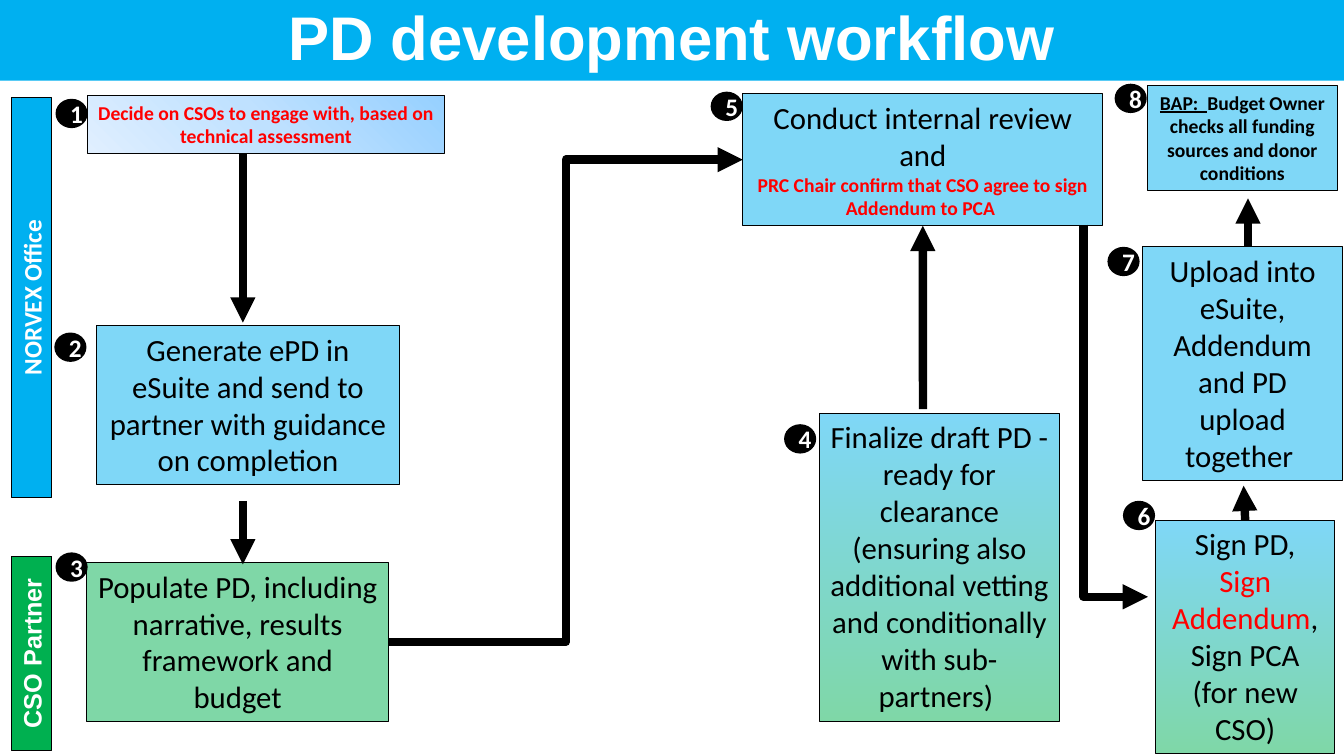
from lxml import etree
from pptx import Presentation
from pptx import util as u
from pptx.dml.color import RGBColor
from pptx.enum import shapes, text
from pptx.oxml import ns

BLACK = RGBColor(0x00, 0x00, 0x00)
WHITE = RGBColor(0xFF, 0xFF, 0xFF)
RED = RGBColor(0xFF, 0x00, 0x00)
BLUE = RGBColor(0x00, 0xB0, 0xF0)
GREEN = RGBColor(0x00, 0xB0, 0x50)
SKY = RGBColor(0x96, 0xD0, 0xFF)
PALE_SKY = RGBColor(0xBF, 0xE1, 0xFF)
ICE = RGBColor(0xE0, 0xEF, 0xFF)

STEP = {"size": u.Pt(22), "name": "Calibri", "bold": False, "color": BLACK}
STEP_RED = {**STEP, "color": RED}
DETAIL = {**STEP, "size": u.Pt(14), "bold": True}
DETAIL_RED = {**DETAIL, "color": RED}
DETAIL_LINE = {**DETAIL, "underline": True}
BADGE = {"size": u.Pt(18), "name": "Calibri", "bold": True, "color": WHITE}
LANE = {**BADGE, "name": "Arial"}
TITLE = {**LANE, "size": u.Pt(44)}

SHARED_STEP = [(0, GREEN), (100, BLUE)]


def add_xml(parent, tag, **values):
    return etree.SubElement(parent, ns.qn(tag), {k: str(v) for k, v in values.items()})


class WorkflowSlide:
    def __init__(self, deck):
        self.slide = deck.slides.add_slide(deck.slide_layouts[5])

    def set_text(self, frame, paragraphs, anchor):
        settings = {"word_wrap": True, "vertical_anchor": anchor}
        for key, value in settings.items():
            setattr(frame, key, value)
        for index, runs in enumerate(paragraphs):
            paragraph = frame.paragraphs[0] if index == 0 else frame.add_paragraph()
            paragraph.alignment = text.PP_ALIGN.CENTER
            for wording, style in runs:
                run = paragraph.add_run()
                run.text = wording
                for key, value in style.items():
                    if key == "color":
                        run.font.color.rgb = value
                    else:
                        setattr(run.font, key, value)

    def title(self, wording, width, height):
        banner = self.slide.shapes.title
        place = {"left": 0, "top": 0, "width": u.Cm(width), "height": u.Cm(height)}
        for key, value in place.items():
            setattr(banner, key, value)
        self.paint(banner, BLUE)
        self.set_text(banner.text_frame, [[(wording, TITLE)]], text.MSO_ANCHOR.MIDDLE)
        banner.text_frame.paragraphs[0].line_spacing = 0.9

    def paint(self, shape, color, alpha=100):
        shape.fill.solid()
        shape.fill.fore_color.rgb = color
        if alpha < 100:
            tone = shape._element.spPr.find(".//" + ns.qn("a:srgbClr"))
            add_xml(tone, "a:alpha", val=alpha * 1000)

    def blend(self, shape, stops, alpha=100, radial=False):
        shape.fill.gradient()
        gradient = shape._element.spPr.find(ns.qn("a:gradFill"))
        for child in list(gradient):
            gradient.remove(child)
        stop_list = add_xml(gradient, "a:gsLst")
        for position, color in stops:
            stop = add_xml(stop_list, "a:gs", pos=position * 1000)
            tone = add_xml(stop, "a:srgbClr", val=color)
            add_xml(tone, "a:alpha", val=alpha * 1000)
        if radial:
            circle = add_xml(gradient, "a:path", path="circle")
            add_xml(circle, "a:fillToRect", l=100000, b=100000)
        else:
            add_xml(gradient, "a:lin", ang=270 * 60000, scaled=0)

    def preset(self, kind, place):
        shape = self.slide.shapes.add_shape(kind, *map(u.Cm, place))
        shape.shadow.inherit = False
        return shape

    def box(self, place, paragraphs, fill, alpha=50, radial=False, rotation=0):
        box = self.preset(shapes.MSO_SHAPE.RECTANGLE, place)
        box.rotation = rotation
        if isinstance(fill, list):
            self.blend(box, fill, alpha, radial)
        else:
            self.paint(box, fill, alpha)
        box.line.color.rgb = BLACK
        box.line.width = u.Pt(0.75)
        self.set_text(box.text_frame, paragraphs, text.MSO_ANCHOR.TOP)
        box.text_frame.auto_size = text.MSO_AUTO_SIZE.SHAPE_TO_FIT_TEXT
        return box

    def badge(self, number, left, top):
        badge = self.preset(shapes.MSO_SHAPE.OVAL, (left, top, 0.81, 0.74))
        self.paint(badge, BLACK)
        badge.line.fill.background()
        self.set_text(badge.text_frame, [[(str(number), BADGE)]], text.MSO_ANCHOR.MIDDLE)

    def arrow(self, ends, start=None, finish=None, bend=None):
        kind = shapes.MSO_CONNECTOR.STRAIGHT if bend is None else shapes.MSO_CONNECTOR.ELBOW
        arrow = self.slide.shapes.add_connector(kind, *map(u.Cm, ends))
        if start:
            arrow.begin_connect(*start)
        if finish:
            arrow.end_connect(*finish)
        arrow.line.color.rgb = BLACK
        arrow.line.width = u.Pt(6)
        properties = arrow._element.spPr
        add_xml(properties.find(ns.qn("a:ln")), "a:tailEnd", type="triangle")
        add_xml(properties, "a:effectLst")
        if bend is not None:
            guides = properties.find(".//" + ns.qn("a:avLst"))
            add_xml(guides, "a:gd", name="adj1", fmla=f"val {bend * 1000}")


def main():
    deck = Presentation()
    deck.slide_width, deck.slide_height = u.Cm(33.87), u.Cm(19.05)
    page = WorkflowSlide(deck)
    page.title("PD development workflow", 33.87, 2.03)

    page.box((-4.24, 6.99, 10.08, 1.02), [[("NORVEX Office", BADGE)]], BLUE, 100, rotation=270)
    page.box((-1.65, 15.95, 4.9, 1.02), [[("CSO Partner", LANE)]], GREEN, 100, rotation=270)

    page.box((2.21, 2.41, 8.99, 1.45),
             [[("Decide on CSOs to engage with, based on technical assessment", DETAIL_RED)]],
             [(0, SKY), (50, PALE_SKY), (100, ICE)], 100, radial=True)
    page.box((2.44, 8.2, 7.62, 4.01),
             [[("Generate ePD in eSuite and send to partner with guidance on completion", STEP)]],
             BLUE)
    populate = page.box(
        (2.18, 14.17, 7.62, 4.01),
        [[("Populate PD, including narrative, results framework and budget", STEP)]], GREEN)
    page.box((20.65, 10.41, 6.05, 7.77),
             [[("Finalize draft PD - ready for clearance", STEP)],
              [("(ensuring also additional vetting and conditionally with sub-partners) ", STEP)]],
             SHARED_STEP)
    review = page.box(
        (18.72, 2.36, 9.07, 3.33),
        [[("Conduct internal review and", STEP)],
         [("PRC Chair confirm that CSO agree to sign Addendum to PCA ", DETAIL_RED)]], BLUE)
    sign = page.box(
        (29.13, 13.11, 4.5, 5.89),
        [[("Sign PD, ", STEP), ("Sign Addendum", STEP_RED), (",", STEP)],
         [("Sign PCA (for new CSO)", STEP)]], SHARED_STEP)
    page.box((28.8, 6.22, 5.03, 5.89),
             [[("Upload into eSuite, Addendum and PD upload together ", STEP)]], BLUE)
    page.box((28.91, 2.16, 4.8, 2.64),
             [[("BAP:  ", DETAIL_LINE),
               ("Budget Owner checks all funding sources and donor conditions", DETAIL)]], BLUE)

    page.arrow((6.12, 3.86, 6.12, 8.13))
    page.arrow((6.12, 12.62, 6.12, 14.22))
    page.arrow((9.8, 16.18, 18.72, 4.02), (populate, 3), (review, 1), bend=50)
    page.arrow((23.26, 10.31, 23.26, 5.69), finish=(review, 2))
    page.arrow((27.31, 5.66, 28.93, 15.04), bend=0)
    page.arrow((31.38, 13.11, 31.34, 12.24), start=(sign, 0))
    page.arrow((31.45, 6.22, 31.45, 5.0))

    badge_corners = [(1.4, 2.49), (1.37, 8.38), (1.4, 13.92), (19.76, 10.69),
                     (17.91, 2.31), (28.3, 12.62), (27.91, 6.22), (28.09, 2.11)]
    for number, corner in enumerate(badge_corners, 1):
        page.badge(number, *corner)

    deck.save("out.pptx")


if __name__ == "__main__":
    main()
